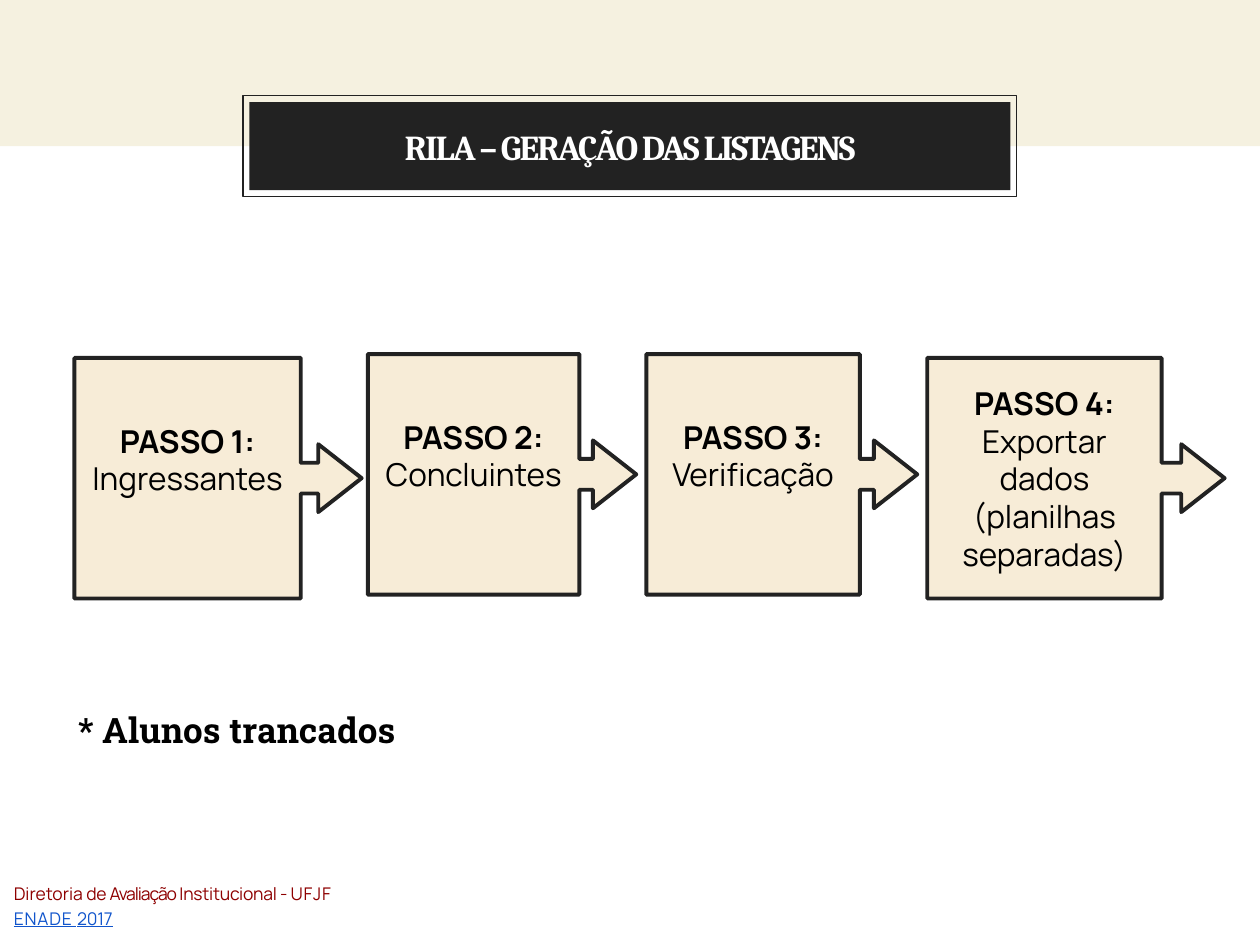
"""Build the slide on the four steps for generating the student lists."""
from pptx import Presentation
from pptx.dml.color import RGBColor
from pptx.enum import shapes, text
from pptx.util import Inches, Pt

WHITE = RGBColor(0xFF, 0xFF, 0xFF)
BLACK = RGBColor(0x00, 0x00, 0x00)
CHARCOAL = RGBColor(0x22, 0x22, 0x22)
IVORY = RGBColor(0xF5, 0xF1, 0xE0)
CREAM = RGBColor(0xF7, 0xEC, 0xD7)
DARK_RED = RGBColor(0x8E, 0x00, 0x00)
LINK_BLUE = RGBColor(0x11, 0x55, 0xCC)

CALLOUT_ADJUSTMENTS = (0.128, 0.141, 0.18, 0.788)
STEP_HEIGHT = 1.91
STEPS = [
    (0.59, 2.84, 2.28, "PASSO 1: ", ["Ingressantes"]),
    (2.92, 2.81, 2.13, "PASSO 2: ", ["Concluintes"]),
    (5.13, 2.81, 2.15, "PASSO 3: ", ["Verificação"]),
    (7.36, 2.84, 2.36, "PASSO 4: ", ["Exportar dados", "(planilhas separadas)"]),
]
FOOTER_RUNS = [
    ("Diretoria ", 0), ("de ", -0.2), ("Avaliação ", -0.6),
    ("Institucional - ", -0.1), ("UFJF", 0.5),
]


def add_run(paragraph, wording, font, size, color, bold=False, spacing=0):
    """Add one formatted run, with letter spacing in points."""
    run = paragraph.add_run()
    run.text = wording
    run.font.name = font
    run.font.size = Pt(size)
    run.font.bold = bold
    run.font.color.rgb = color
    if spacing:
        run.font._element.set("spc", str(round(spacing * 100)))
    return run


def set_frame(shape, anchor, side_inset=0.1, vertical_inset=0.1):
    """Give the text of a shape its insets, wrapping and anchor."""
    frame = shape.text_frame
    frame.word_wrap = True
    frame.auto_size = text.MSO_AUTO_SIZE.NONE
    frame.vertical_anchor = anchor
    frame.margin_left = frame.margin_right = Inches(side_inset)
    frame.margin_top = frame.margin_bottom = Inches(vertical_inset)
    return frame


def add_panel(slide, kind, box, fill=None, line_width=None):
    """Add a preset shape with an optional fill and outline."""
    shape = slide.shapes.add_shape(kind, *map(Inches, box))
    shape.shadow.inherit = False
    if fill is None:
        shape.fill.background()
    else:
        shape.fill.solid()
        shape.fill.fore_color.rgb = fill
    if line_width is None:
        shape.line.fill.background()
    else:
        shape.line.color.rgb = CHARCOAL
        shape.line.width = Pt(line_width)
    return shape


def add_title(slide, wording):
    """Set the title in a dark box in front of the band and its frame."""
    rectangle = shapes.MSO_SHAPE.RECTANGLE
    add_panel(slide, rectangle, (0, 0, 10, 1.16), fill=IVORY)
    add_panel(slide, rectangle, (1.93, 0.76, 6.14, 0.8), line_width=0.75)
    title = slide.shapes.title
    slide.shapes._spTree.append(title._element)
    title.left, title.top, title.width, title.height = map(Inches, (1.98, 0.81, 6.04, 0.7))
    title.fill.solid()
    title.fill.fore_color.rgb = CHARCOAL
    paragraph = set_frame(title, text.MSO_ANCHOR.MIDDLE).paragraphs[0]
    paragraph.alignment = text.PP_ALIGN.CENTER
    add_run(paragraph, wording, "Cambria", 20, WHITE, bold=True, spacing=-1.1)


def add_step(slide, left, top, width, label, lines):
    """Add an arrow callout with a bold label and its description."""
    callout = add_panel(slide, shapes.MSO_SHAPE.RIGHT_ARROW_CALLOUT,
                        (left, top, width, STEP_HEIGHT), CREAM, 2.25)
    for index, value in enumerate(CALLOUT_ADJUSTMENTS):
        callout.adjustments[index] = value
    frame = set_frame(callout, text.MSO_ANCHOR.MIDDLE)
    if len(lines) == 1:
        frame.margin_bottom = Inches(0.4)
    for index, line in enumerate(lines):
        paragraph = frame.add_paragraph() if index else frame.paragraphs[0]
        paragraph.alignment = text.PP_ALIGN.CENTER
        if index == 0:
            add_run(paragraph, label, "Manrope", 18, BLACK, bold=True)
        add_run(paragraph, line, "Manrope", 18, BLACK)


def add_text_box(slide, box, vertical_inset):
    """Add a wrapping text box and return its text frame."""
    shape = slide.shapes.add_textbox(*map(Inches, box))
    return set_frame(shape, text.MSO_ANCHOR.TOP, 0.11, vertical_inset)


def add_note(slide, wording):
    """Add the bold note below the steps."""
    paragraph = add_text_box(slide, (0.51, 5.56, 9.13, 0.45), 0.05).paragraphs[0]
    paragraph.line_spacing = 1.03
    add_run(paragraph, wording, "Roboto Slab", 20, BLACK, bold=True)


def add_footer(slide):
    """Add the department line and the underlined exam line."""
    frame = add_text_box(slide, (0, 6.98, 8.87, 0.52), 0.1)
    department = frame.paragraphs[0]
    department.line_spacing = Pt(6.7)
    for wording, spacing in FOOTER_RUNS:
        add_run(department, wording, "Manrope", 10, DARK_RED, spacing=spacing)
    exam = frame.add_paragraph()
    exam.space_before = Pt(2.4)
    for wording, spacing in (("ENADE ", 0.5), ("2017", -0.1)):
        run = add_run(exam, wording, "Manrope", 10, LINK_BLUE, spacing=spacing)
        run.font.underline = True


def main():
    """Build and save the presentation."""
    presentation = Presentation()
    presentation.slide_width, presentation.slide_height = Inches(10), Inches(7.5)
    slide = presentation.slides.add_slide(presentation.slide_layouts[5])
    add_title(slide, "RILA – GERAÇÃO DAS LISTAGENS")
    for step in STEPS:
        add_step(slide, *step)
    add_note(slide, "* Alunos trancados")
    add_footer(slide)
    presentation.save("out.pptx")


if __name__ == "__main__":
    main()
